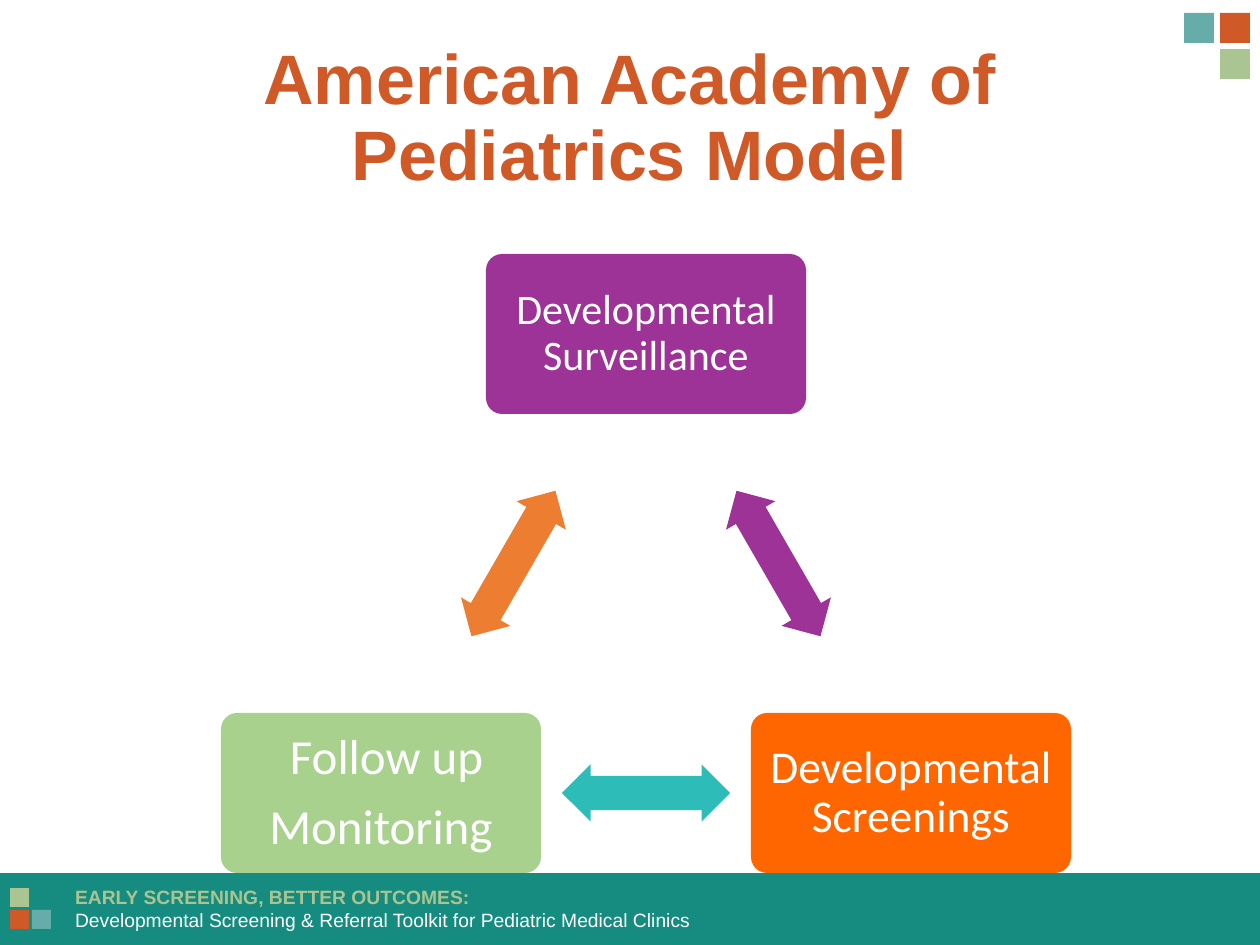
import math

from pptx import Presentation
from pptx.dml.color import RGBColor
from pptx.enum.shapes import MSO_SHAPE
from pptx.enum.text import MSO_ANCHOR, PP_ALIGN
from pptx.util import Emu, Pt

EMU_PER_PX = 914400 / 126
RECT = MSO_SHAPE.RECTANGLE
ROUNDED = MSO_SHAPE.ROUNDED_RECTANGLE
DOUBLE_ARROW = MSO_SHAPE.LEFT_RIGHT_ARROW
TOP, MIDDLE = MSO_ANCHOR.TOP, MSO_ANCHOR.MIDDLE
LEFT, CENTER = PP_ALIGN.LEFT, PP_ALIGN.CENTER

COLORS = {
    "teal": "168B7F",
    "sage": "AAC591",
    "rust": "D05928",
    "mist": "66ADA9",
    "white": "FFFFFF",
    "purple": "9D3297",
    "orange": "FF6600",
    "green": "A9D18E",
    "aqua": "2EBCB8",
    "amber": "ED7D31",
}

CARD_W, CARD_H = 320, 160
ARROW_W, ARROW_H = 168, 57

# centre, colour, text size, anchor, lines
STAGES = [
    ((646, 334), "purple", 24, MIDDLE, ["Developmental Surveillance"]),
    ((911, 793), "orange", 26, MIDDLE, ["Developmental Screenings"]),
    ((381, 793), "green", 28, TOP, [" Follow up", "Monitoring"]),
]
ARROW_COLORS = ["purple", "aqua", "amber"]


def px(length):
    return Emu(round(length * EMU_PER_PX))


def box_px(*lengths):
    return [px(length) for length in lengths]


def rgb(name):
    return RGBColor.from_string(COLORS[name])


def add_block(slide, preset, box, color):
    block = slide.shapes.add_shape(preset, *box_px(*box))
    block.shadow.inherit = False
    block.fill.solid()
    block.fill.fore_color.rgb = rgb(color)
    block.line.fill.background()
    return block


def set_frame(frame, margin_x, margin_y, anchor):
    settings = {
        "word_wrap": True,
        "vertical_anchor": anchor,
        "margin_left": px(margin_x),
        "margin_right": px(margin_x),
        "margin_top": px(margin_y),
        "margin_bottom": px(margin_y),
    }
    for name, value in settings.items():
        setattr(frame, name, value)


def write_lines(frame, lines, paragraph_format):
    """Write (text, color, font format) lines as paragraphs."""
    for index, (text, color, font_format) in enumerate(lines):
        paragraph = frame.add_paragraph() if index else frame.paragraphs[0]
        for name, value in paragraph_format.items():
            setattr(paragraph, name, value)
        run = paragraph.add_run()
        run.text = text
        run.font.color.rgb = rgb(color)
        for name, value in font_format.items():
            setattr(run.font, name, value)


def add_mosaic(slide, left, top, side, step, tiles):
    """Draw square tiles given as (column, row, color)."""
    for column, row, color in tiles:
        box = (left + column * step, top + row * step, side, side)
        add_block(slide, RECT, box, color)


def add_footer(slide):
    add_block(slide, RECT, (0, 873, 1260, 72), "teal")
    caption = slide.shapes.add_textbox(*box_px(63, 879, 1092, 59)).text_frame
    set_frame(caption, 12, 6, TOP)
    font = {"name": "Arial", "size": Pt(11)}
    write_lines(caption, [
        ("EARLY SCREENING, BETTER OUTCOMES:", "sage", {**font, "bold": True}),
        ("Developmental Screening & Referral Toolkit for Pediatric Medical Clinics",
         "white", {**font, "bold": False}),
    ], {"alignment": LEFT})


def add_title(slide):
    title = slide.shapes.add_textbox(*box_px(204, 44, 851, 168)).text_frame
    set_frame(title, 0, 0, TOP)
    font = {"name": "Arial", "size": Pt(40), "bold": True}
    write_lines(title, [("American Academy of Pediatrics Model", "rust", font)],
                {"alignment": CENTER, "line_spacing": 0.9})


def add_card(slide, center, color, size, anchor, lines):
    x, y = center
    box = (x - CARD_W // 2, y - CARD_H // 2, CARD_W, CARD_H)
    card = add_block(slide, ROUNDED, box, color)
    card.adjustments[0] = 0.1
    set_frame(card.text_frame, 10, 14, anchor)
    font = {"name": "Calibri", "size": Pt(size)}
    write_lines(card.text_frame, [(line, "white", font) for line in lines],
                {"alignment": CENTER, "line_spacing": 0.9,
                 "space_after": Pt(round(size * 0.35))})


def add_cycle_arrow(slide, start, end, color):
    """Centre a double arrow between two cards, turned along their axis."""
    x, y = ((a + b) / 2 for a, b in zip(start, end))
    box = (x - ARROW_W / 2, y - ARROW_H / 2, ARROW_W, ARROW_H)
    arrow = add_block(slide, DOUBLE_ARROW, box, color)
    arrow.adjustments[0] = 0.6
    arrow.adjustments[1] = 0.5
    angle = math.degrees(math.atan2(end[1] - start[1], end[0] - start[0]))
    arrow.rotation = round(angle) % 360


def add_cycle(slide):
    centers = [stage[0] for stage in STAGES]
    next_centers = centers[1:] + centers[:1]
    for stage, following, color in zip(STAGES, next_centers, ARROW_COLORS):
        add_card(slide, *stage)
        add_cycle_arrow(slide, stage[0], following, color)


def main():
    presentation = Presentation()
    presentation.slide_width, presentation.slide_height = box_px(1260, 945)
    slide = presentation.slides.add_slide(presentation.slide_layouts[6])
    add_footer(slide)
    add_mosaic(slide, 10, 888, 19, 22,
               [(0, 0, "sage"), (0, 1, "rust"), (1, 1, "mist")])
    add_mosaic(slide, 1184, 13, 30, 36,
               [(1, 1, "sage"), (1, 0, "rust"), (0, 0, "mist")])
    add_title(slide)
    add_cycle(slide)
    presentation.save("out.pptx")


if __name__ == "__main__":
    main()
